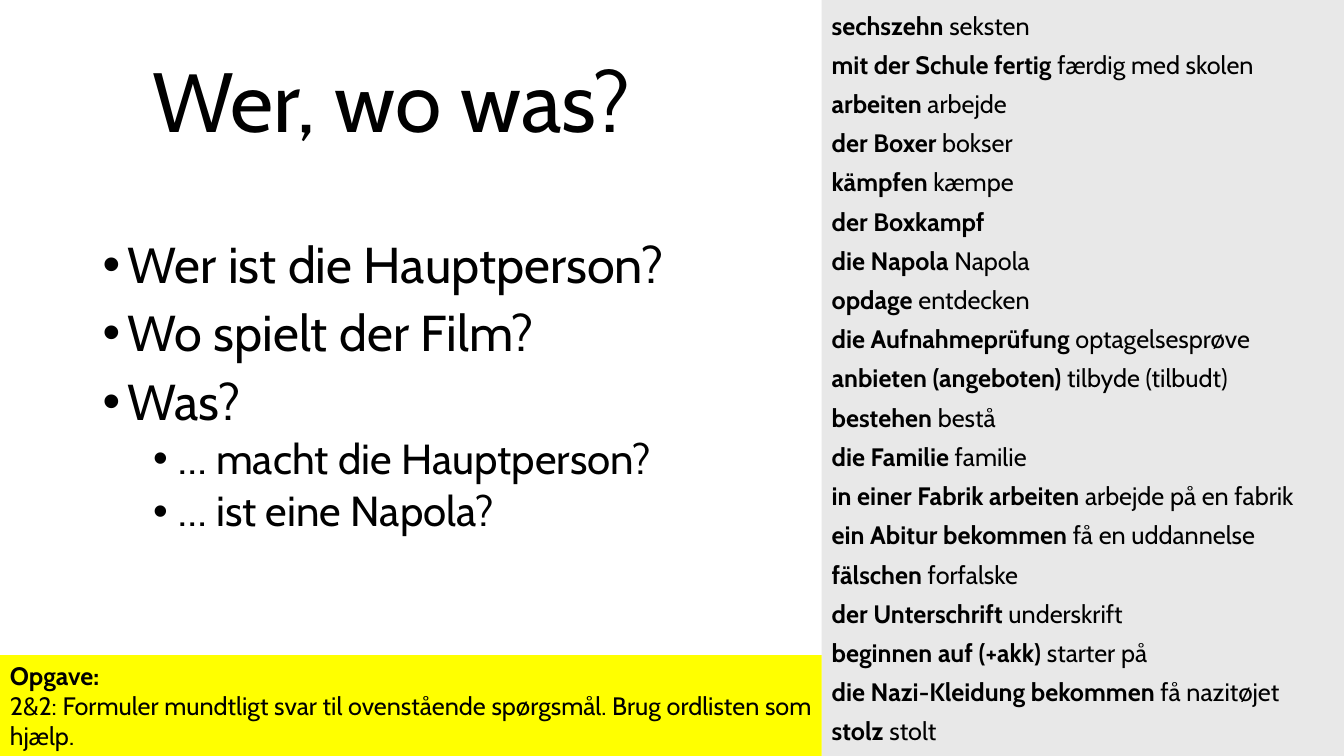
from lxml import etree
from pptx import Presentation
from pptx.dml.color import RGBColor
from pptx.enum.shapes import MSO_SHAPE
from pptx.enum.text import MSO_ANCHOR, PP_ALIGN
from pptx.oxml.ns import qn
from pptx.util import Emu, Pt

RECT = MSO_SHAPE.RECTANGLE
TOP, MIDDLE = MSO_ANCHOR.TOP, MSO_ANCHOR.MIDDLE
LEFT = PP_ALIGN.LEFT
EMU_PER_PX = 9144
FONT = "Cabin"

QUESTIONS = [
    (0, "Wer ist die Hauptperson?"),
    (0, "Wo spielt der Film?"),
    (0, "Was?"),
    (1, "… macht die Hauptperson?"),
    (1, "… ist eine Napola?"),
]
LEVELS = [
    {"size": 36, "before": 10, "indent": 25},
    {"size": 30, "before": 5, "indent": 75},
]
WORDS = [
    ("sechszehn", "seksten"),
    ("mit der Schule fertig", "færdig med skolen"),
    ("arbeiten", "arbejde"),
    ("der Boxer", "bokser"),
    ("kämpfen", "kæmpe"),
    ("der Boxkampf", ""),
    ("die Napola", "Napola"),
    ("opdage", "entdecken"),
    ("die Aufnahmeprüfung", "optagelsesprøve"),
    ("anbieten (angeboten)", "tilbyde (tilbudt)"),
    ("bestehen", "bestå"),
    ("die Familie", "familie"),
    ("in einer Fabrik arbeiten", "arbejde på en fabrik"),
    ("ein Abitur bekommen", "få en uddannelse"),
    ("fälschen", "forfalske"),
    ("der Unterschrift", "underskrift"),
    ("beginnen auf (+akk)", "starter på"),
    ("die Nazi-Kleidung bekommen", "få nazitøjet"),
    ("stolz", "stolt"),
]
TASK = "2&2: Formuler mundtligt svar til ovenstående spørgsmål. Brug ordlisten som hjælp."


def px(n):
    return Emu(n * EMU_PER_PX)


def color(value):
    return RGBColor.from_string(value)


def add_frame(sp, anchor):
    tf = sp.text_frame
    tf.word_wrap = True
    tf.vertical_anchor = anchor
    return tf


def add_textbox(s, x, y, w, h, anchor=TOP):
    return add_frame(s.shapes.add_textbox(px(x), px(y), px(w), px(h)), anchor)


def add_panel(s, x, y, w, h, fill):
    sp = s.shapes.add_shape(RECT, px(x), px(y), px(w), px(h))
    sp.shadow.inherit = False
    sp.fill.solid()
    sp.fill.fore_color.rgb = color(fill)
    sp.line.fill.background()
    return add_frame(sp, TOP)


def add_paragraph(tf, i, spacing=None, before=0):
    p = tf.paragraphs[0] if i == 0 else tf.add_paragraph()
    p.alignment = LEFT
    p.line_spacing = spacing
    if i and before:
        p.space_before = Pt(before)
    return p


def add_bullet(p, indent):
    pPr = p._p.get_or_add_pPr()
    pPr.set("marL", str(px(indent)))
    pPr.set("indent", str(px(-25)))
    etree.SubElement(pPr, qn("a:buFont"), typeface="Arial")
    etree.SubElement(pPr, qn("a:buChar"), char="•")


def add_text(p, text, size=18, bold=False):
    r = p.add_run()
    r.text = text
    r.font.name = FONT
    r.font.size = Pt(size)
    r.font.bold = bold
    r.font.color.rgb = color("000000")


def add_title(s):
    tf = add_textbox(s, 141, 32, 633, 145, MIDDLE)
    add_text(add_paragraph(tf, 0, 0.9), "Wer, wo was?", size=60)


def add_questions(s):
    tf = add_textbox(s, 92, 233, 1150, 476)
    for i, (level, question) in enumerate(QUESTIONS):
        style = LEVELS[level]
        p = add_paragraph(tf, i, 0.9, style["before"])
        p.level = level
        add_bullet(p, style["indent"])
        add_text(p, question, size=style["size"])


def add_word_list(s):
    tf = add_panel(s, 815, -4, 518, 859, "E8E8E8")
    for i, (word, meaning) in enumerate(WORDS):
        p = add_paragraph(tf, i, Pt(28))
        add_text(p, word, bold=True)
        if meaning:
            add_text(p, " " + meaning)


def add_task(s):
    tf = add_panel(s, 0, 650, 815, 101, "FFFF00")
    add_text(add_paragraph(tf, 0), "Opgave:", bold=True)
    add_text(add_paragraph(tf, 1), TASK)


def main():
    prs = Presentation()
    prs.slide_width, prs.slide_height = px(1333), px(750)
    s = prs.slides.add_slide(prs.slide_layouts[6])
    add_title(s)
    add_questions(s)
    add_word_list(s)
    add_task(s)
    prs.save("out.pptx")


if __name__ == "__main__":
    main()
